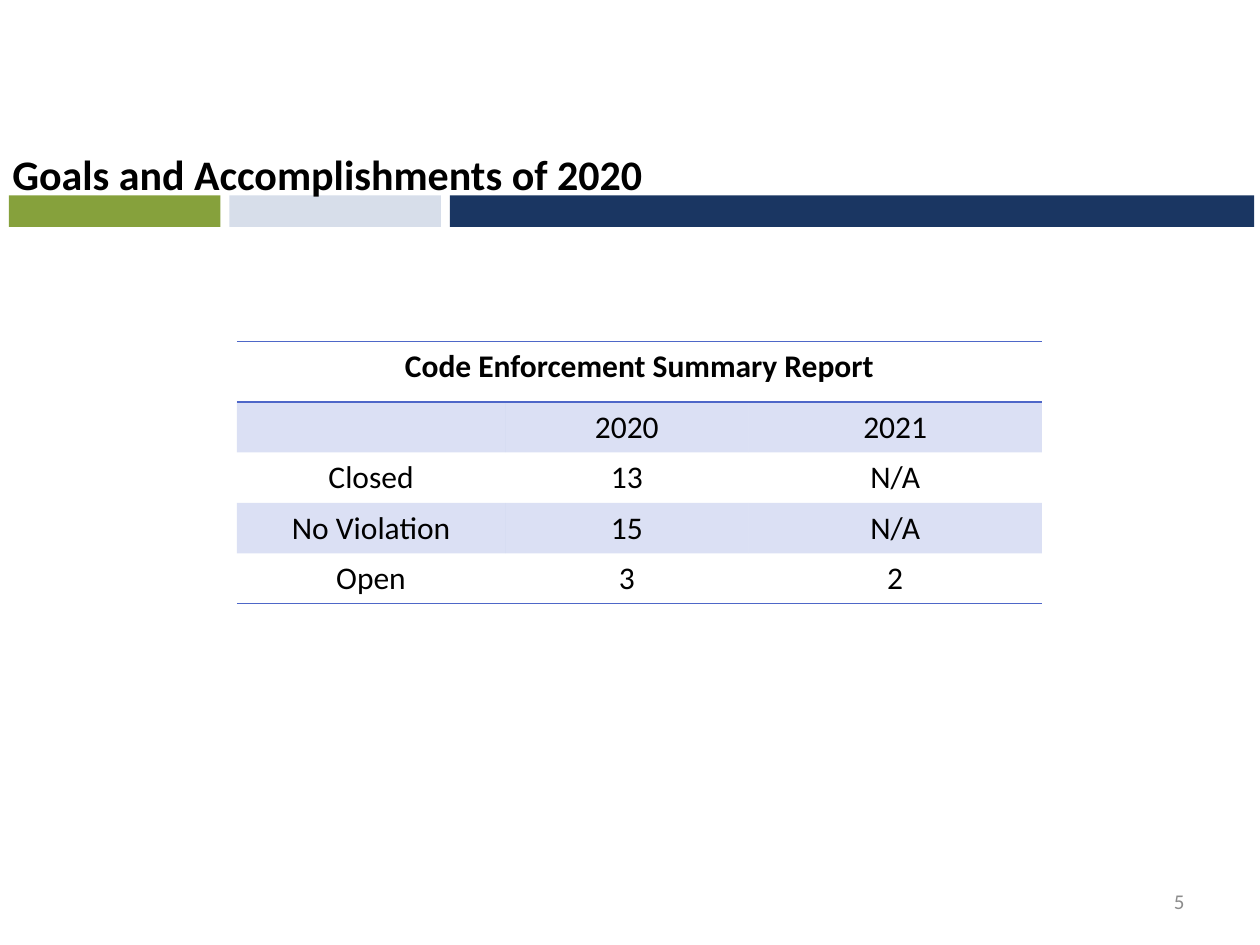
from dataclasses import dataclass

from lxml import etree
from pptx import Presentation
from pptx import util as u
from pptx.dml.color import RGBColor
from pptx.enum import shapes, text
from pptx.oxml import ns


@dataclass(frozen=True)
class Theme:
    font: str = "Calibri"
    ink: str = "000000"
    muted: str = "8C8C8C"
    accent: str = "4E67C8"
    navy: str = "1A3662"
    green: str = "86A13C"
    pale: str = "D7DEEA"
    band_opacity: int = 20
    title_size: int = 24
    table_size: int = 18
    number_size: int = 12


@dataclass(frozen=True)
class Area:
    left: float
    top: float
    width: float
    height: float

    def emu(self) -> list[int]:
        return [u.Inches(n) for n in (self.left, self.top, self.width, self.height)]


@dataclass(frozen=True)
class Bar:
    columns: float
    color: str


THEME = Theme()
WIDTH, HEIGHT = 10, 7.5
BAR_TOP, BAR_HEIGHT, BAR_GAP, BAR_COLUMN = 1.55, 0.25, 0.07, 1.68
BARS = [Bar(1, THEME.green), Bar(1, THEME.pale), Bar(3.8, THEME.navy)]

HEADING = "Code Enforcement Summary Report"
REPORT = [
    ["", "2020", "2021"],
    ["Closed", "13", "N/A"],
    ["No Violation", "15", "N/A"],
    ["Open", "3", "2"],
]
COLUMN_WIDTHS = [2.13, 1.93, 2.33]
HEADING_HEIGHT, ROW_HEIGHT = 0.48, 0.4
PLAIN_TABLE_STYLE = "{2D5ABB26-0587-4C30-8999-92F81FD0307C}"


def style_text(para, size: int, color: str, bold: bool, align) -> None:
    para.alignment = align
    for span in para.runs:
        span.font.name = THEME.font
        span.font.size = u.Pt(size)
        span.font.bold = bold
        span.font.color.rgb = RGBColor.from_string(color)


def add_text(page, words: str, area: Area, size: int, color: str,
             bold: bool, align, anchor) -> None:
    frame = page.shapes.add_textbox(*area.emu()).text_frame
    frame.word_wrap = True
    frame.vertical_anchor = anchor
    frame.text = words
    style_text(frame.paragraphs[0], size, color, bold, align)


def add_bars(page) -> None:
    left = BAR_GAP
    for bar in BARS:
        width = bar.columns * BAR_COLUMN
        area = Area(left, BAR_TOP, width, BAR_HEIGHT)
        box = page.shapes.add_shape(shapes.MSO_SHAPE.RECTANGLE, *area.emu())
        box.shadow.inherit = False
        box.fill.solid()
        box.fill.fore_color.rgb = RGBColor.from_string(bar.color)
        box.line.fill.background()
        left += width + BAR_GAP


def add_borders(cell, sides: list[str]) -> None:
    properties = cell._tc.get_or_add_tcPr()
    for index, side in enumerate(sides):
        line = etree.Element(ns.qn(f"a:ln{side}"), w=str(u.Pt(1)))
        fill = etree.SubElement(line, ns.qn("a:solidFill"))
        etree.SubElement(fill, ns.qn("a:srgbClr"), val=THEME.accent)
        properties.insert(index, line)


def fill_band(cell) -> None:
    cell.fill.solid()
    cell.fill.fore_color.rgb = RGBColor.from_string(THEME.accent)
    color = cell._tc.tcPr.find(".//" + ns.qn("a:srgbClr"))
    etree.SubElement(color, ns.qn("a:alpha"), val=str(THEME.band_opacity * 1000))


def add_report(page) -> None:
    rows = [[HEADING, "", ""], *REPORT]
    heights = [HEADING_HEIGHT] + [ROW_HEIGHT] * len(REPORT)
    area = Area(1.88, 2.71, sum(COLUMN_WIDTHS), sum(heights))
    table = page.shapes.add_table(len(rows), len(COLUMN_WIDTHS), *area.emu()).table
    table.first_row = table.horz_banding = False
    table._tbl.tblPr.find(ns.qn("a:tableStyleId")).text = PLAIN_TABLE_STYLE
    for column, width in zip(table.columns, COLUMN_WIDTHS):
        column.width = u.Inches(width)
    borders = {0: ["T", "B"], len(rows) - 1: ["B"]}
    for r, values in enumerate(rows):
        table.rows[r].height = u.Inches(heights[r])
        for c, value in enumerate(values):
            cell = table.cell(r, c)
            cell.text = value
            style_text(cell.text_frame.paragraphs[0], THEME.table_size, THEME.ink,
                       r == 0, text.PP_ALIGN.CENTER)
            if r % 2:
                fill_band(cell)
            else:
                cell.fill.background()
            add_borders(cell, borders.get(r, []))
    table.cell(0, 0).merge(table.cell(0, len(COLUMN_WIDTHS) - 1))


def main() -> None:
    deck = Presentation()
    deck.slide_width, deck.slide_height = u.Inches(WIDTH), u.Inches(HEIGHT)
    page = deck.slides.add_slide(deck.slide_layouts[6])
    add_bars(page)
    add_text(page, "5", Area(7.17, 6.95, 2.33, 0.4), THEME.number_size, THEME.muted,
             False, text.PP_ALIGN.RIGHT, text.MSO_ANCHOR.MIDDLE)
    add_report(page)
    add_text(page, "Goals and Accomplishments of 2020", Area(0, 1.13, 6.64, 0.5),
             THEME.title_size, THEME.ink, True, text.PP_ALIGN.LEFT, text.MSO_ANCHOR.TOP)
    deck.save("out.pptx")


if __name__ == "__main__":
    main()
